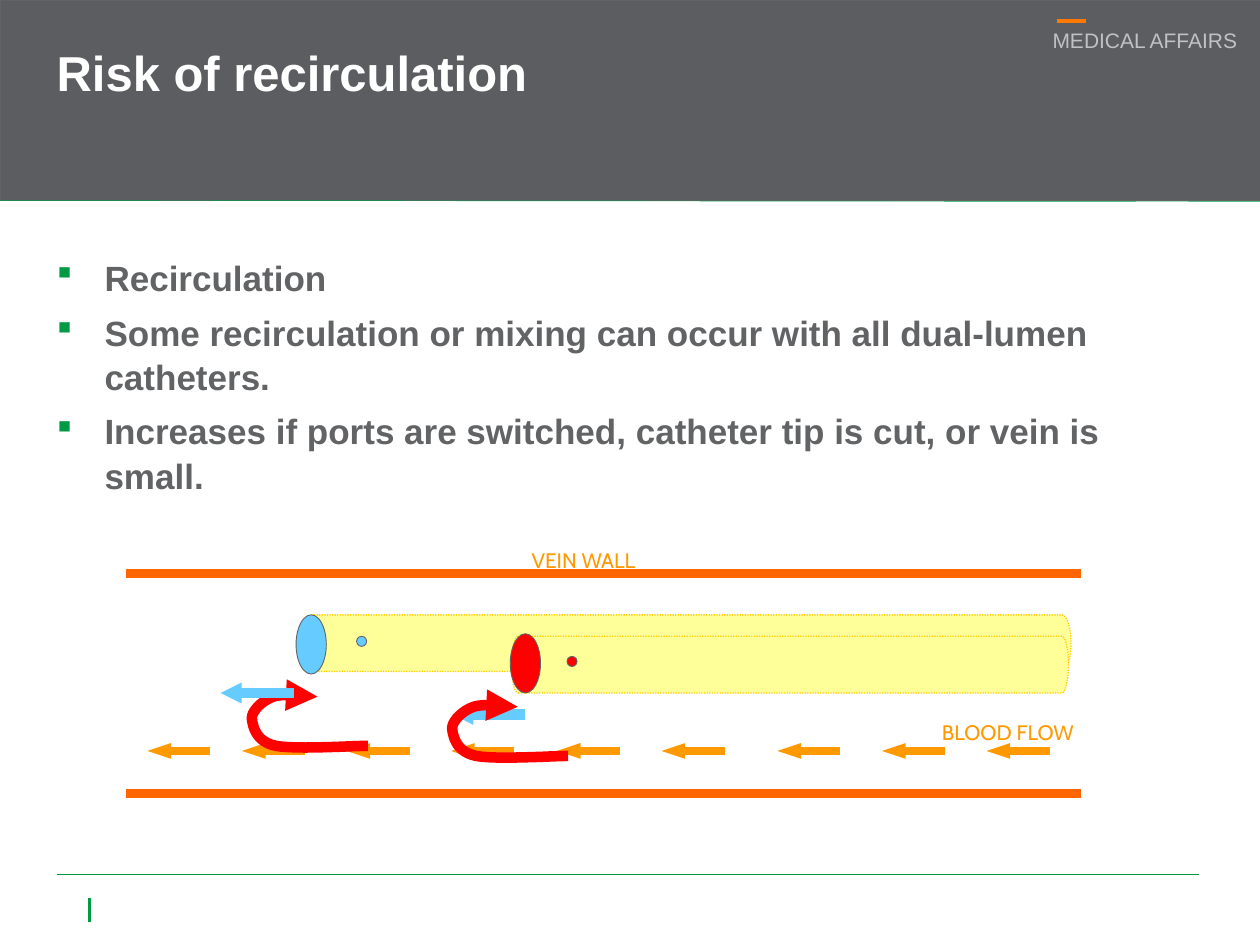
import pptx
import pptx.util
import pptx.dml.color
import pptx.enum.dml
import pptx.enum.shapes
import pptx.enum.text
import pptx.oxml.ns
from lxml import etree

RGB = pptx.dml.color.RGBColor
SHAPE = pptx.enum.shapes.MSO_SHAPE
ALIGN = pptx.enum.text.PP_ALIGN
DOTTED = pptx.enum.dml.MSO_LINE.ROUND_DOT
EMU_PER_PX = 9144  # 100 px to the inch

WHITE = RGB(0xFF, 0xFF, 0xFF)
BAND = RGB(0x5C, 0x5D, 0x60)
GREY = RGB(0x61, 0x63, 0x65)
PALE_GREY = RGB(0xBF, 0xC1, 0xC2)
GREEN = RGB(0x00, 0x9A, 0x44)
ACCENT = RGB(0xFF, 0x79, 0x00)
WALL = RGB(0xFF, 0x66, 0x00)
FLOW = RGB(0xFF, 0x99, 0x00)
TUBE = RGB(0xFF, 0xFF, 0x99)
TUBE_EDGE = RGB(0xFF, 0xCC, 0x00)
RED = RGB(0xFF, 0x00, 0x00)
BLUE = RGB(0x66, 0xCC, 0xFF)

TITLE = "Risk of recirculation"
POINTS = [
    "Recirculation",
    "Some recirculation or mixing can occur with all dual-lumen catheters.",
    "Increases if ports are switched, catheter tip is cut, or vein is small.",
]
# start, end, colour, width in points
RULES = [
    ((45, 694), (952, 694), GREEN, 0.25),
    ((71, 713), (71, 732), GREEN, 1.5),
    ((0, 159), (1000, 160), GREEN, 0.25),
    ((839, 17), (862, 17), ACCENT, 2.25),
]
# left, top, length, thickness, roundness of the end
TUBES = [(241, 488, 609, 45, 0.318), (406, 505, 442, 45, 0.231)]
# left, top, width, height, colour
OPENINGS = [
    (405, 503, 24, 47, RED),
    (283, 505, 8, 8, BLUE),
    (450, 521, 8, 8, RED),
    (235, 488, 24, 47, BLUE),
]
WALL_LEVELS = [630, 455]
FLOW_TIPS = [117, 192, 275, 358, 442, 525, 617, 700, 783]
FLOW_LEVEL, FLOW_LENGTH = 596, 50
# start point, then Bezier segments (two controls and an end)
LOOP_START = (292, 592)
LOOP_CURVES = [
    ((280, 592), (235, 595), (219, 592)),
    ((204, 589), (201, 578), (200, 571)),
    ((199, 565), (208, 556), (217, 553)),
    ((225, 550), (245, 553), (252, 553)),
]
SECOND_LOOP_SHIFT = (159, 8)

deck = pptx.Presentation()
deck.slide_width, deck.slide_height = 1000 * EMU_PER_PX, 750 * EMU_PER_PX
page = deck.slides.add_slide(deck.slide_layouts[6])


def emu(*lengths):
    return [pptx.util.Emu(round(length * EMU_PER_PX)) for length in lengths]


def add_child(parent, tag, **attributes):
    return etree.SubElement(parent, pptx.oxml.ns.qn(tag), attributes)


def style_line(shape, color, width, head=None):
    """Colour a line; head is the (width, length) size of its arrowhead."""
    shape.line.color.rgb = color
    shape.line.width = pptx.util.Pt(width)
    if head:
        add_child(shape.line._get_or_add_ln(), "a:tailEnd",
                  type="triangle", w=head[0], len=head[1])


def add_line(start, end, color, width, head=None):
    line = page.shapes.add_connector(
        pptx.enum.shapes.MSO_CONNECTOR.STRAIGHT, *emu(*start, *end))
    style_line(line, color, width, head)
    add_child(line._element.spPr, "a:effectLst")


def add_shape(kind, left, top, width, height, fill, edge, edge_width):
    shape = page.shapes.add_shape(kind, *emu(left, top, width, height))
    shape.shadow.inherit = False
    shape.fill.solid()
    shape.fill.fore_color.rgb = fill
    style_line(shape, edge, edge_width)
    return shape


def add_tube(left, top, length, thickness, roundness):
    """A can is upright, so lay it on its side about its centre."""
    offset = (length - thickness) / 2
    tube = add_shape(SHAPE.CAN, left + offset, top - offset, thickness, length,
                     TUBE, TUBE_EDGE, 0.75)
    tube.adjustments[0] = roundness
    tube.rotation = 270
    tube.line.dash_style = DOTTED


def add_bullet(para):
    properties = para._p.get_or_add_pPr()
    indent = 38 * EMU_PER_PX
    properties.set("marL", str(indent))
    properties.set("indent", str(-indent))
    color = add_child(properties, "a:buClr")
    add_child(color, "a:srgbClr", val=str(GREEN))
    add_child(properties, "a:buFont", typeface="Wingdings")
    add_child(properties, "a:buChar", char="§")


def add_text(lines, left, top, width, height, *, size, color, font="Arial",
             bold=False, align=ALIGN.LEFT, spacing=1.0, gap=0,
             inset=(0, 0), bullets=False):
    box = page.shapes.add_textbox(*emu(left, top, width, height))
    frame = box.text_frame
    frame.word_wrap = True
    frame.margin_left = frame.margin_right = emu(inset[0])[0]
    frame.margin_top = frame.margin_bottom = emu(inset[1])[0]
    for index, line in enumerate(lines):
        para = frame.paragraphs[0] if index == 0 else frame.add_paragraph()
        para.alignment = align
        para.line_spacing = spacing
        if index:
            para.space_before = pptx.util.Pt(gap)
        if bullets:
            add_bullet(para)
        span = para.add_run()
        span.text = line
        span.font.name = font
        span.font.size = pptx.util.Pt(size)
        span.font.bold = bold
        span.font.color.rgb = color


def add_label(text, left, top, width):
    add_text([text], left, top, width, 30, size=12, color=FLOW, font="Cabin",
             align=ALIGN.CENTER, inset=(10, 5))


def bezier_points(start, curves, steps=12):
    points = [start]
    for first, second, end in curves:
        origin = points[-1]
        for step in range(1, steps + 1):
            t = step / steps
            u = 1 - t
            points.append(tuple(
                u**3 * a + 3 * u * u * t * b + 3 * u * t * t * c + t**3 * d
                for a, b, c, d in zip(origin, first, second, end)))
    return points


def add_loop(shift_x=0, shift_y=0):
    points = [emu(x + shift_x, y + shift_y)
              for x, y in bezier_points(LOOP_START, LOOP_CURVES)]
    builder = page.shapes.build_freeform(*points[0])
    builder.add_line_segments(points[1:], close=False)
    loop = builder.convert_to_shape()
    loop.shadow.inherit = False
    loop.fill.background()
    style_line(loop, RED, 6, head=("med", "med"))


add_shape(SHAPE.RECTANGLE, 0, 0, 1000, 159, BAND, GREY, 0.25)
add_text(["MEDICAL AFFAIRS"], 832, 24, 150, 18, size=12, color=PALE_GREY,
         align=ALIGN.RIGHT, spacing=0.9)
for rule in RULES:
    add_line(*rule)
add_text([TITLE], 45, 39, 907, 119, size=28, color=WHITE, bold=True, spacing=0.9)
add_text(POINTS, 45, 202, 907, 462, size=20, color=GREY, bold=True,
         spacing=1.05, gap=6, bullets=True)

for tube in TUBES:
    add_tube(*tube)
for *place, color in OPENINGS:
    add_shape(SHAPE.OVAL, *place, color, GREY, 0.5)
for level in WALL_LEVELS:
    add_line((100, level), (858, level), WALL, 5)
add_label("VEIN WALL", 392, 430, 142)
add_label("BLOOD FLOW", 700, 566, 200)
for tip in FLOW_TIPS:
    add_line((tip + FLOW_LENGTH, FLOW_LEVEL), (tip, FLOW_LEVEL), FLOW, 4.5,
             head=("sm", "med"))

add_loop()
for right, level in [(417, 567), (233, 550)]:
    add_line((right, level), (right - 58, level), BLUE, 6, head=("sm", "sm"))
add_loop(*SECOND_LOOP_SHIFT)

deck.save("out.pptx")
